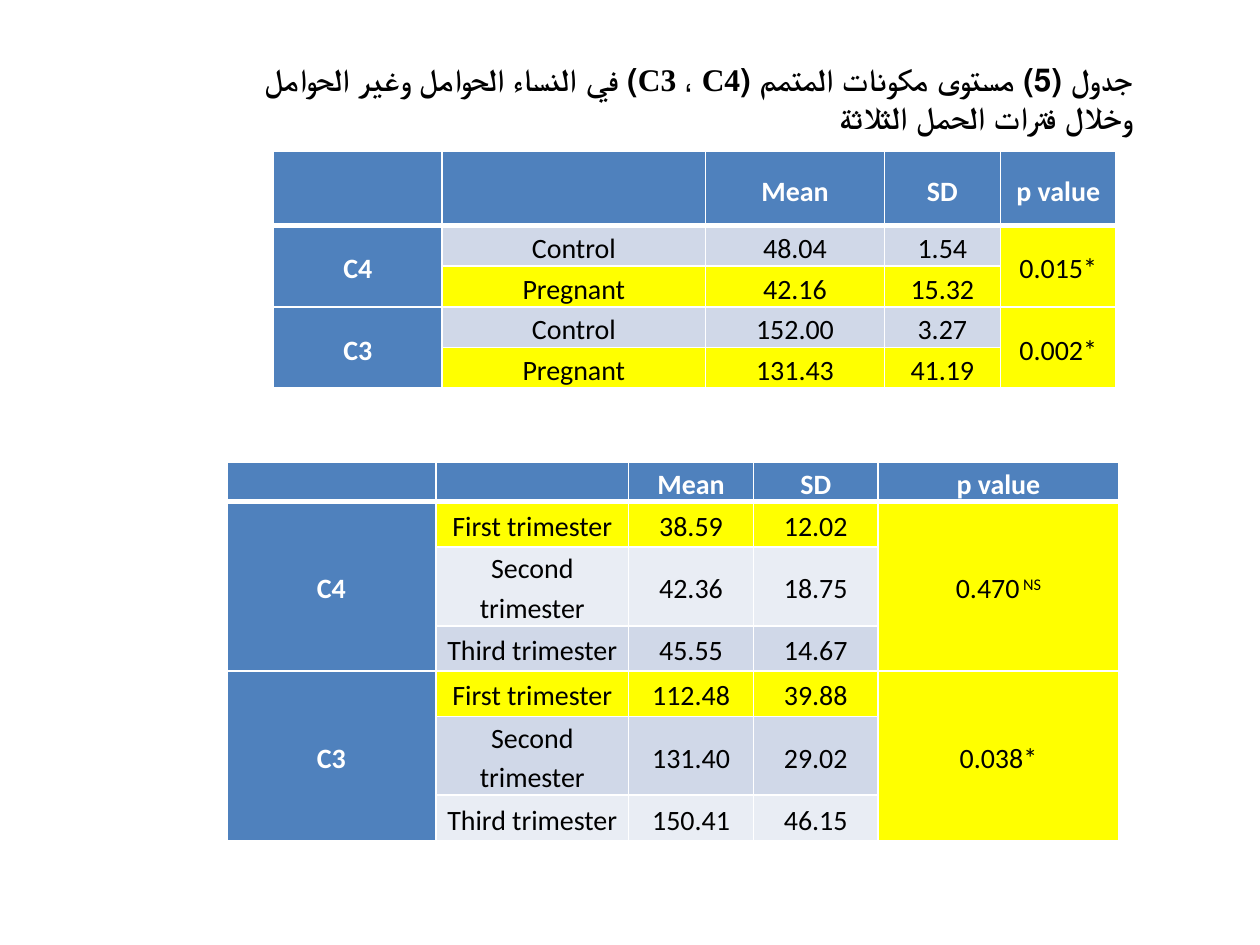
"""Build a slide with two tables of complement component levels in pregnancy."""
from lxml.etree import SubElement
from pptx import Presentation
from pptx.dml.color import RGBColor
from pptx.enum.text import MSO_ANCHOR as Anchor, MSO_AUTO_SIZE as AutoSize, PP_ALIGN as Align
from pptx.oxml import parse_xml
from pptx.oxml.ns import nsdecls, qn
from pptx.util import Inches, Pt

BLUE = RGBColor(0x4F, 0x81, 0xBD)
YELLOW = RGBColor(0xFF, 0xFF, 0x00)
BAND = RGBColor(0xD0, 0xD8, 0xE8)
PALE = RGBColor(0xE9, 0xED, 0xF4)
WHITE = RGBColor(0xFF, 0xFF, 0xFF)
BLACK = RGBColor(0x00, 0x00, 0x00)

prs = Presentation()
prs.slide_width, prs.slide_height = Inches(10), Inches(7.5)
X, Y = prs.slide_width / 100, prs.slide_height / 100
slide = prs.slides.add_slide(prs.slide_layouts[6])


def set_borders(cell, top, bottom):
    properties = cell._tc.get_or_add_tcPr()
    sides = {"lnL": 1, "lnR": 1, "lnT": top, "lnB": bottom}
    for position, (side, points) in enumerate(sides.items()):
        line = parse_xml(f'<a:{side} {nsdecls("a")} w="{Pt(points)}"/>')
        SubElement(SubElement(line, qn("a:solidFill")), qn("a:srgbClr")).set("val", str(WHITE))
        properties.insert(position, line)


def style_cell(cell, text, fill, color, bold, insets):
    cell.fill.solid()
    cell.fill.fore_color.rgb = fill
    cell.vertical_anchor = Anchor.MIDDLE
    cell.margin_left = cell.margin_right = Inches(insets[0])
    cell.margin_top, cell.margin_bottom = Inches(insets[1]), 0
    paragraph = cell.text_frame.paragraphs[0]
    paragraph.font.name, paragraph.font.size = "Calibri", Pt(16)
    paragraph.font.bold, paragraph.font.color.rgb = bold, color
    if text:
        paragraph.alignment, paragraph.line_spacing = Align.CENTER, 1.15
        value, mark, note = text.partition(" NS")
        paragraph.add_run().text = value
        if mark:
            superscript = paragraph.add_run()
            superscript.text = mark + note
            superscript._r.get_or_add_rPr().set("baseline", "30000")


HEADINGS = ["", "", "Mean", "SD", "p value"]
pregnancy = dict(
    frame=(21.7, 16, 66.9, 24.8),
    columns=[13.4, 20.9, 14.2, 9.2, 9.2],
    heights=[7.87] + [3.87] * 4,
    insets=(0.01, 0.01),
    groups=[
        ("C4", "0.015*", [("Control", "48.04", "1.54", BAND),
                          ("Pregnant", "42.16", "15.32", YELLOW)]),
        ("C3", "0.002*", [("Control", "152.00", "3.27", BAND),
                          ("Pregnant", "131.43", "41.19", YELLOW)]),
    ],
)
trimesters = dict(
    frame=(18, 48.93, 70.9, 39.87),
    columns=[16.6, 15.3, 9.9, 9.9, 19.1],
    heights=[3.47] + [4.8, 7.2, 4.8] * 2,
    insets=(0.07, 0),
    groups=[
        ("C4", "0.470 NS", [("First trimester", "38.59", "12.02", YELLOW),
                            ("Second trimester", "42.36", "18.75", PALE),
                            ("Third trimester", "45.55", "14.67", BAND)]),
        ("C3", "0.038*", [("First trimester", "112.48", "39.88", YELLOW),
                          ("Second trimester", "131.40", "29.02", BAND),
                          ("Third trimester", "150.41", "46.15", PALE)]),
    ],
)

for study in (pregnancy, trimesters):
    left, top, width, height = study["frame"]
    insets = study["insets"]
    frame = slide.shapes.add_table(
        len(study["heights"]), len(HEADINGS),
        int(left * X), int(top * Y), int(width * X), int(height * Y))
    table = frame.table
    for column, share in zip(table.columns, study["columns"]):
        column.width = int(share * X)
    for row, share in zip(table.rows, study["heights"]):
        row.height = int(share * Y)
    frame.height = int(height * Y)

    for index, heading in enumerate(HEADINGS):
        style_cell(table.cell(0, index), heading, BLUE, WHITE, True, insets)
        set_borders(table.cell(0, index), 1, 3)

    first = 1
    for component, p_value, levels in study["groups"]:
        last = first + len(levels) - 1
        for offset, (label, mean, deviation, fill) in enumerate(levels):
            at = first + offset
            lead = offset == 0
            style_cell(table.cell(at, 0), component if lead else "", BLUE, WHITE, True, insets)
            for index, text in enumerate((label, mean, deviation), start=1):
                style_cell(table.cell(at, index), text, fill, BLACK, False, insets)
            style_cell(table.cell(at, 4), p_value if lead else "", YELLOW, BLACK, False, insets)
            for index in range(len(HEADINGS)):
                set_borders(table.cell(at, index), 3 if at == 1 else 1, 1)
        for index in (0, 4):
            table.cell(first, index).merge(table.cell(last, index))
        first = last + 1

title = slide.shapes.add_textbox(int(18.5 * X), int(5.73 * Y), int(72.4 * X), int(13.47 * Y))
title.text_frame.word_wrap = True
title.text_frame.auto_size = AutoSize.NONE
title.text_frame.vertical_anchor = Anchor.TOP
caption = title.text_frame.paragraphs[0]
caption.alignment = Align.RIGHT
caption._p.get_or_add_pPr().set("rtl", "1")
caption.font.size, caption.font.bold, caption.font.color.rgb = Pt(18), True, BLACK
for words, font in [
    ("جدول (5) مستوى مكونات المتمم (", "Roboto"),
    ("C3", "Times New Roman"),
    (" ، ", "Roboto"),
    ("C4", "Times New Roman"),
    (") في النساء الحوامل وغير الحوامل وخلال فترات الحمل الثلاثة", "Roboto"),
]:
    run = caption.add_run()
    run.text, run.font.name = words, font

prs.save("out.pptx")
